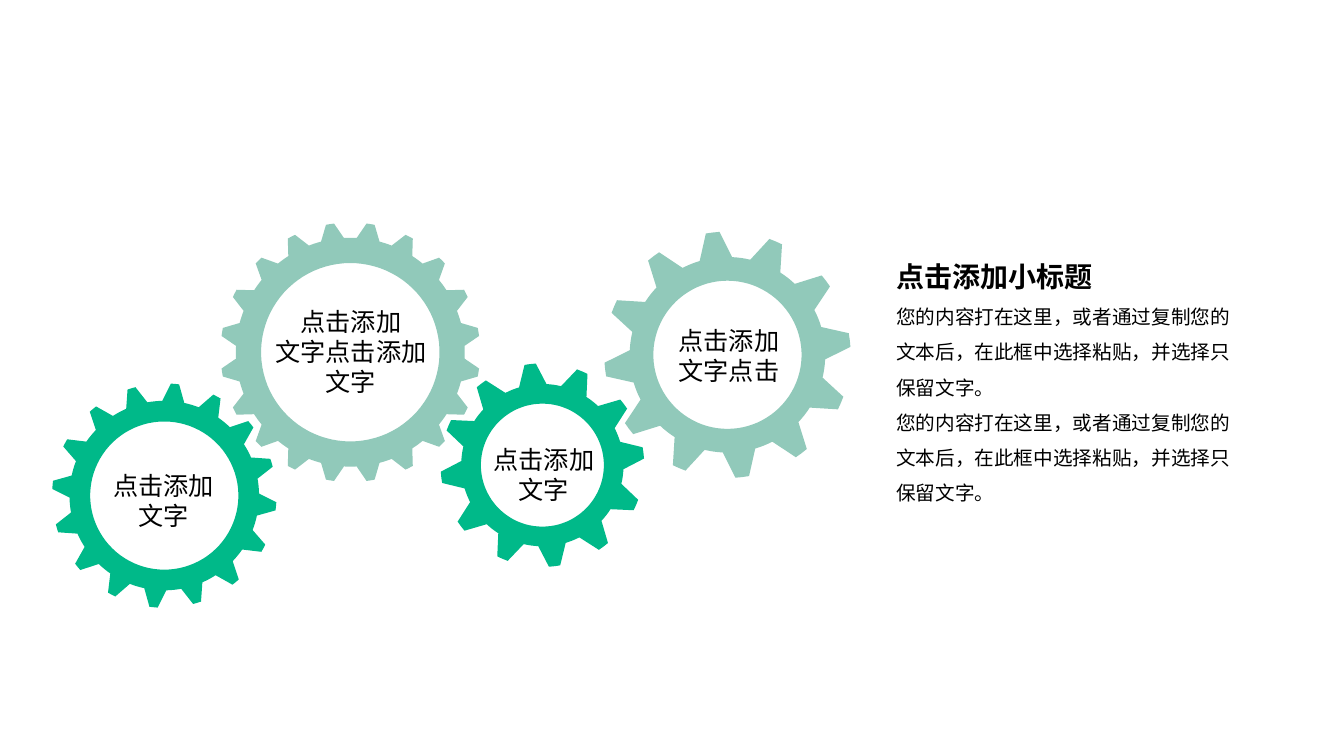
from dataclasses import dataclass
from math import cos, radians, sin

from lxml.etree import SubElement
from pptx import Presentation
from pptx.dml.color import RGBColor
from pptx.enum.text import MSO_ANCHOR as Anchor
from pptx.enum.text import MSO_AUTO_SIZE as Fit
from pptx.enum.text import PP_ALIGN as Align
from pptx.oxml.ns import qn
from pptx.slide import Slide
from pptx.util import Inches, Pt

FONT = "Noto Sans CJK SC"
BLACK = RGBColor(0x00, 0x00, 0x00)
GREEN = RGBColor(0x00, 0xB9, 0x89)
SAGE = RGBColor(0x91, 0xC9, 0xBA)

Box = tuple[float, float, float, float]
Point = tuple[int, int]


@dataclass
class Gear:
    x: float
    y: float
    hole: float
    root: float
    tip: float
    teeth: int
    phase: float
    wide: float
    slim: float
    color: RGBColor

    def point(self, size: float, angle: float) -> Point:
        turn = radians(angle)
        return Inches(self.x + size * sin(turn)), Inches(self.y - size * cos(turn))

    def rim(self) -> list[Point]:
        step = 360 / self.teeth
        gap = (step - 2 * self.wide) / 4
        points = []
        for tooth in range(self.teeth):
            mid = self.phase + tooth * step
            points += [self.point(self.tip, mid + turn) for turn in (-self.slim, 0, self.slim)]
            points += [self.point(self.root, mid + self.wide + part * gap) for part in range(5)]
        return points

    def bore(self) -> list[Point]:
        return [self.point(self.hole, angle) for angle in range(0, 360, 4)]


@dataclass
class Label:
    box: Box
    lines: list[str]


GEARS = [
    Gear(3.475, 3.495, 0.885, 1.135, 1.287, 20, 9, 5.8, 1.8, SAGE),
    Gear(5.38, 4.615, 0.61, 0.805, 1.01, 12, -6.9, 9.8, 3.2, GREEN),
    Gear(1.63, 4.917, 0.735, 0.94, 1.113, 16, 5.5, 6.7, 2.1, GREEN),
    Gear(7.215, 3.52, 0.735, 0.97, 1.222, 12, -6.9, 9.6, 3.2, SAGE),
]

LABELS = [
    Label((1.01, 4.61, 1.23, 0.71), ["点击添加", "文字"]),
    Label((2.61, 2.98, 1.74, 1.01), ["点击添加", "文字点击添加", "文字"]),
    Label((4.78, 4.35, 1.23, 0.71), ["点击添加", "文字"]),
    Label((6.36, 3.17, 1.74, 0.71), ["点击添加", "文字点击"]),
]

TITLE = "点击添加小标题"
BODY = "您的内容打在这里，或者通过复制您的文本后，在此框中选择粘贴，并选择只保留文字。"


def add_text(slide: Slide, box: Box, lines: list[str], *, size: float = 18,
             head: float | None = None, align: Align = Align.LEFT,
             anchor: Anchor = Anchor.TOP, space: float = 1.0) -> None:
    frame = slide.shapes.add_textbox(*map(Inches, box)).text_frame
    frame.word_wrap = True
    frame.auto_size = Fit.SHAPE_TO_FIT_TEXT
    frame.vertical_anchor = anchor
    for index, line in enumerate(lines):
        para = frame.add_paragraph() if index else frame.paragraphs[0]
        para.alignment = align
        para.line_spacing = space
        run = para.add_run()
        run.text = line
        title = head is not None and index == 0
        font = run.font
        font.name = FONT
        font.size = Pt(head if title else size)
        font.bold = title
        font.color.rgb = BLACK
        SubElement(run._r.get_or_add_rPr(), qn("a:ea")).set("typeface", FONT)


def add_gear(slide: Slide, gear: Gear) -> None:
    rim, bore = gear.rim(), gear.bore()
    path = slide.shapes.build_freeform(*bore[0])
    path.add_line_segments(bore[1:], close=True)
    path.move_to(*rim[0])
    path.add_line_segments(rim[1:], close=True)
    shape = path.convert_to_shape()
    shape.shadow.inherit = False
    shape.fill.solid()
    shape.fill.fore_color.rgb = gear.color
    shape.line.fill.background()


def main() -> None:
    deck = Presentation()
    deck.slide_width, deck.slide_height = Inches(13.33), Inches(7.5)
    slide = deck.slides.add_slide(deck.slide_layouts[6])
    for label in LABELS:
        add_text(slide, label.box, label.lines, align=Align.CENTER, anchor=Anchor.MIDDLE)
    add_text(slide, (8.79, 2.36, 3.6, 2.73), [TITLE, BODY, BODY], size=14, head=20, space=1.5)
    for gear in GEARS:
        add_gear(slide, gear)
    deck.save("out.pptx")


if __name__ == "__main__":
    main()
